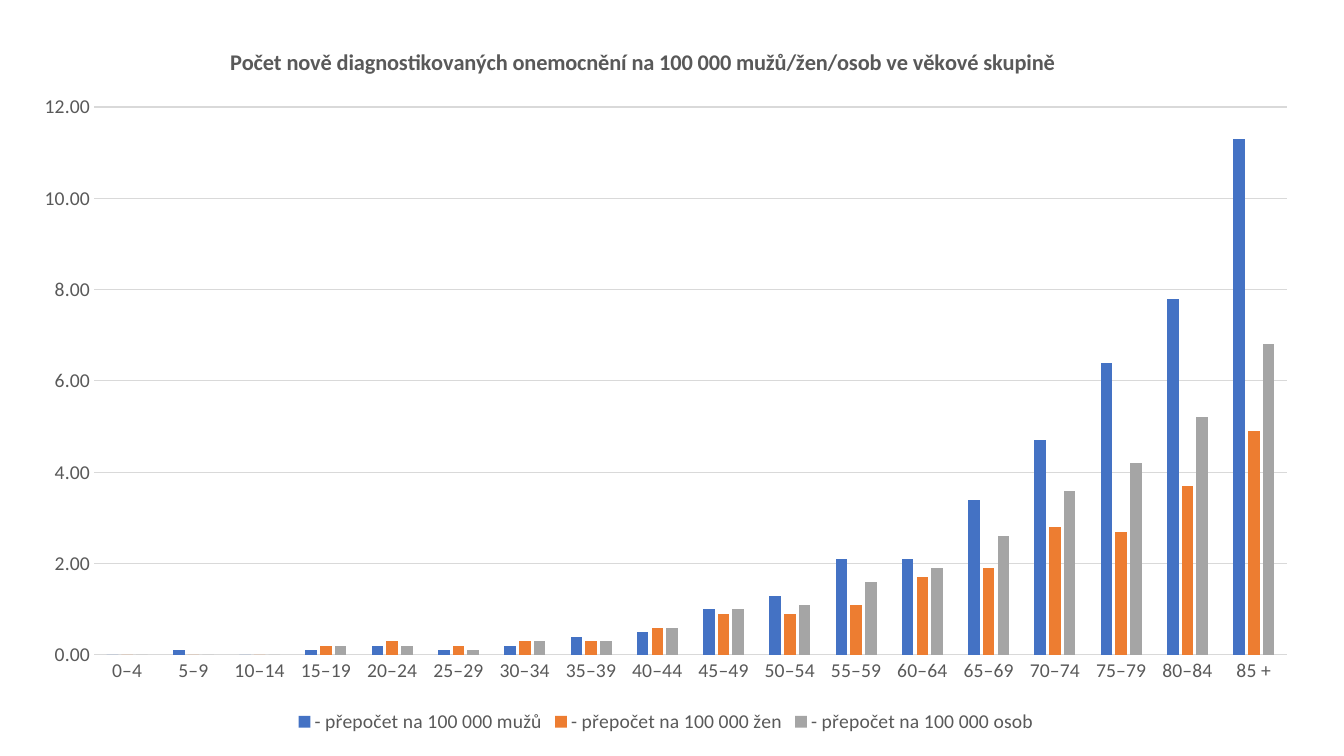
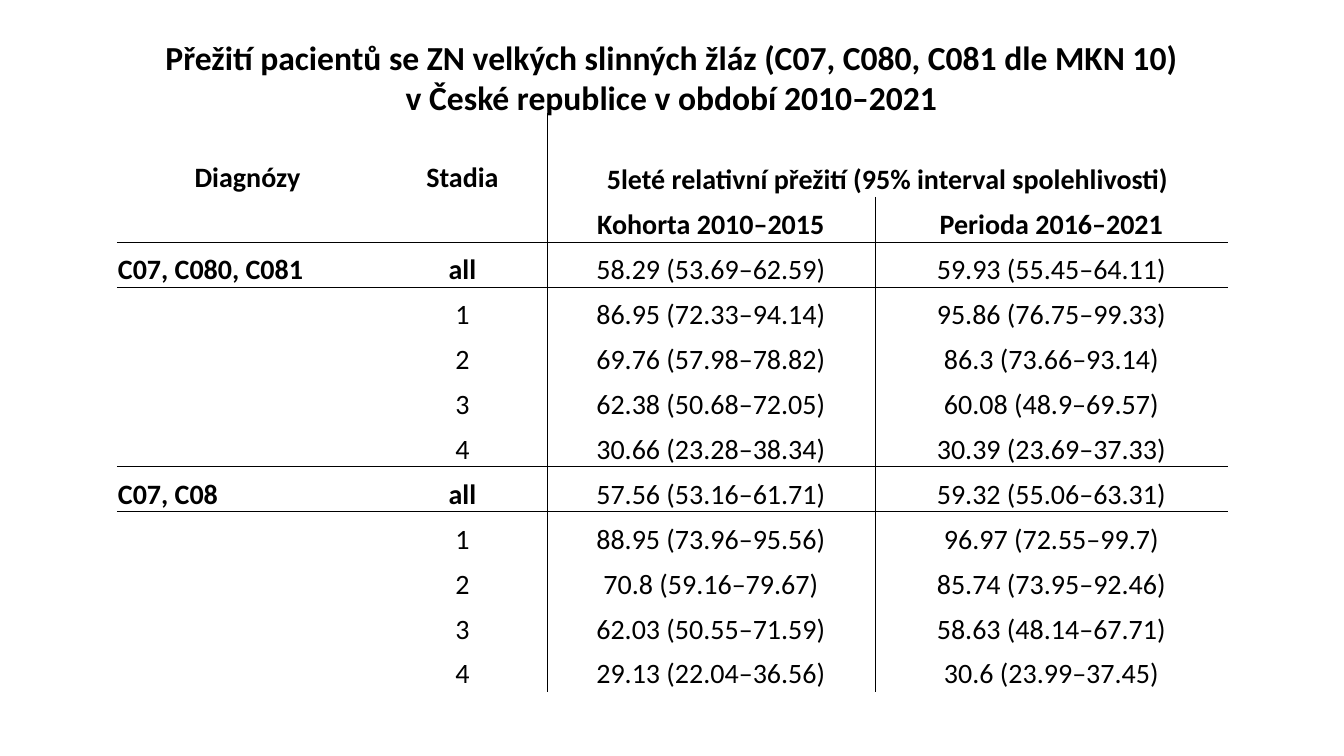
"""Build two slides: incidence by age group and survival by diagnosis and stage."""
from pptx import Presentation
from pptx.chart.data import CategoryChartData
from pptx.dml.color import RGBColor
from pptx.enum.chart import XL_CHART_TYPE, XL_LEGEND_POSITION, XL_TICK_MARK
from pptx.enum.text import MSO_ANCHOR, MSO_AUTO_SIZE, PP_ALIGN
from pptx.oxml import parse_xml
from pptx.oxml.ns import nsdecls
from pptx.util import Pt

PX = 12192000 / 1344
FONT = "Calibri"
BLACK = RGBColor(0x00, 0x00, 0x00)
DARK_GRAY = RGBColor(0x59, 0x59, 0x59)
LIGHT_GRAY = RGBColor(0xD9, 0xD9, 0xD9)
BLUE = RGBColor(0x44, 0x72, 0xC4)
ORANGE = RGBColor(0xED, 0x7D, 0x31)
GRAY = RGBColor(0xA5, 0xA5, 0xA5)
CLUSTERED = XL_CHART_TYPE.COLUMN_CLUSTERED
LEGEND_BOTTOM = XL_LEGEND_POSITION.BOTTOM
NO_TICK = XL_TICK_MARK.NONE
LEFT, CENTER = PP_ALIGN.LEFT, PP_ALIGN.CENTER
MIDDLE, BOTTOM = MSO_ANCHOR.MIDDLE, MSO_ANCHOR.BOTTOM
FIT_SHAPE = MSO_AUTO_SIZE.SHAPE_TO_FIT_TEXT
NO_TABLE_STYLE = "{2D5ABB26-0587-4C30-8999-92F81FD0307C}"

CHART_TITLE = "Počet nově diagnostikovaných onemocnění na 100 000 mužů/žen/osob ve věkové skupině"
AGE_GROUPS = [f"{age}–{age + 4}" for age in range(0, 85, 5)] + ["85 +"]
SERIES = [
    ("- přepočet na 100 000 mužů", BLUE,
     [0, 0.1, 0, 0.1, 0.2, 0.1, 0.2, 0.4, 0.5, 1, 1.3, 2.1, 2.1, 3.4, 4.7, 6.4, 7.8, 11.3]),
    ("- přepočet na 100 000 žen", ORANGE,
     [0, 0, 0, 0.2, 0.3, 0.2, 0.3, 0.3, 0.6, 0.9, 0.9, 1.1, 1.7, 1.9, 2.8, 2.7, 3.7, 4.9]),
    ("- přepočet na 100 000 osob", GRAY,
     [0, 0, 0, 0.2, 0.2, 0.1, 0.3, 0.3, 0.6, 1, 1.1, 1.6, 1.9, 2.6, 3.6, 4.2, 5.2, 6.8]),
]
TABLE_TITLE = [
    "Přežití pacientů se ZN velkých slinných žláz (C07, C080, C081 dle MKN 10)",
    "v České republice v období 2010–2021",
]
TABLE_ROWS = [
    ("Diagnózy", "Stadia", "5leté relativní přežití (95% interval spolehlivosti)", ""),
    ("", "", "Kohorta 2010–2015", "Perioda 2016–2021"),
    ("C07, C080, C081", "all", "58.29 (53.69–62.59)", "59.93 (55.45–64.11)"),
    ("", "1", "86.95 (72.33–94.14)", "95.86 (76.75–99.33)"),
    ("", "2", "69.76 (57.98–78.82)", "86.3 (73.66–93.14)"),
    ("", "3", "62.38 (50.68–72.05)", "60.08 (48.9–69.57)"),
    ("", "4", "30.66 (23.28–38.34)", "30.39 (23.69–37.33)"),
    ("C07, C08", "all", "57.56 (53.16–61.71)", "59.32 (55.06–63.31)"),
    ("", "1", "88.95 (73.96–95.56)", "96.97 (72.55–99.7)"),
    ("", "2", "70.8 (59.16–79.67)", "85.74 (73.95–92.46)"),
    ("", "3", "62.03 (50.55–71.59)", "58.63 (48.14–67.71)"),
    ("", "4", "29.13 (22.04–36.56)", "30.6 (23.99–37.45)"),
]
COLUMN_WIDTHS = [261, 169, 328, 353]
ROW_HEIGHTS = [84] + [45] * 11


def px(*lengths):
    """Turn px into EMU."""
    return [round(length * PX) for length in lengths]


def style_font(font, size, color, bold=False):
    """Set family, size, colour and weight of a font."""
    font.name, font.size, font.bold = FONT, Pt(size), bold
    font.color.rgb = color


presentation = Presentation()
presentation.slide_width, presentation.slide_height = px(1344, 756)
blank_layout = presentation.slide_layouts[6]

slide = presentation.slides.add_slide(blank_layout)
chart_data = CategoryChartData(number_format="0.00")
chart_data.categories = AGE_GROUPS
for name, color, values in SERIES:
    chart_data.add_series(name, values)
chart = slide.shapes.add_chart(CLUSTERED, *px(19, 19, 1294, 719), chart_data).chart
style_font(chart.font, 14, DARK_GRAY)

chart.has_title = True
title_paragraph = chart.chart_title.text_frame.paragraphs[0]
title_paragraph.text = CHART_TITLE
style_font(title_paragraph.font, 16, DARK_GRAY, bold=True)

chart.has_legend = True
chart.legend.position = LEGEND_BOTTOM
chart.legend.include_in_layout = False
style_font(chart.legend.font, 14, DARK_GRAY)

plot = chart.plots[0]
plot.gap_width, plot.overlap, plot.vary_by_categories = 219, -27, False
for series, (name, color, values) in zip(plot.series, SERIES):
    series.format.fill.solid()
    series.format.fill.fore_color.rgb = color

category_axis, value_axis = chart.category_axis, chart.value_axis
for axis in (category_axis, value_axis):
    axis.major_tick_mark = axis.minor_tick_mark = NO_TICK
    style_font(axis.tick_labels.font, 14, DARK_GRAY)
value_axis.minimum_scale, value_axis.maximum_scale, value_axis.major_unit = 0, 12, 2
value_axis.tick_labels.number_format = "0.00"
value_axis.tick_labels.number_format_is_linked = False
value_axis.format.line.fill.background()
for line in (category_axis.format.line, value_axis.major_gridlines.format.line):
    line.color.rgb = LIGHT_GRAY
    line.width = Pt(0.75)

plot_layout = '<c:layoutTarget val="inner"/>', {"x": 75, "y": 88, "w": 1193, "h": 548}
title_layout = "", {"x": 207, "y": 24}
for parent_name, index, (target, lengths) in (("plotArea", 0, plot_layout), ("title", 1, title_layout)):
    parent = chart._chartSpace.xpath(f"c:chart/c:{parent_name}")[0]
    for layout in parent.xpath("c:layout"):
        parent.remove(layout)
    modes = "".join(f'<c:{key}Mode val="edge"/>' for key in "xy")
    fractions = "".join(
        f'<c:{key} val="{length / (1294 if key in "xw" else 719):.4f}"/>'
        for key, length in lengths.items())
    parent.insert(index, parse_xml(
        f'<c:layout {nsdecls("c")}><c:manualLayout>{target}{modes}{fractions}'
        "</c:manualLayout></c:layout>"))

slide = presentation.slides.add_slide(blank_layout)
text_frame = slide.shapes.add_textbox(*px(44, 32, 1255, 92)).text_frame
text_frame.word_wrap = True
text_frame.auto_size = FIT_SHAPE
text_frame.text = "\n".join(TABLE_TITLE)
for paragraph in text_frame.paragraphs:
    paragraph.alignment = CENTER
    style_font(paragraph.font, 24, BLACK, bold=True)

table = slide.shapes.add_table(
    len(TABLE_ROWS), len(COLUMN_WIDTHS),
    *px(117, 113, sum(COLUMN_WIDTHS), sum(ROW_HEIGHTS))).table
table.first_row = table.horz_banding = False
table._tbl.tblPr[0].text = NO_TABLE_STYLE
for column, width in zip(table.columns, px(*COLUMN_WIDTHS)):
    column.width = width
for row, height in zip(table.rows, px(*ROW_HEIGHTS)):
    row.height = height
for start, end in (((0, 0), (1, 0)), ((0, 1), (1, 1)), ((0, 2), (0, 3))):
    table.cell(*start).merge(table.cell(*end))

for row_index, texts in enumerate(TABLE_ROWS):
    is_header = row_index < 2
    for column_index, text in enumerate(texts):
        cell = table.cell(row_index, column_index)
        cell.fill.background()
        cell.margin_left, cell.margin_right, cell.margin_top, cell.margin_bottom = px(1, 1, 1, 0)
        cell.vertical_anchor = MIDDLE if row_index == 0 and column_index < 2 else BOTTOM
        paragraph = cell.text_frame.paragraphs[0]
        paragraph.text = text
        paragraph.alignment = LEFT if column_index == 0 and not is_header else CENTER
        style_font(paragraph.font, 20, BLACK, bold=is_header or column_index == 0 or text == "all")
        borders = {
            "lnL": column_index == 2,
            "lnR": column_index == 1,
            "lnT": row_index in (2, 7),
            "lnB": row_index in (1, 6),
        }
        sides = [side for side, drawn in borders.items() if drawn]
        for position, side in enumerate(sides):
            cell._tc.get_or_add_tcPr().insert(position, parse_xml(
                f'<a:{side} {nsdecls("a")} w="{Pt(0.5)}"><a:solidFill>'
                f'<a:srgbClr val="{BLACK}"/></a:solidFill></a:{side}>'))

presentation.save("out.pptx")
